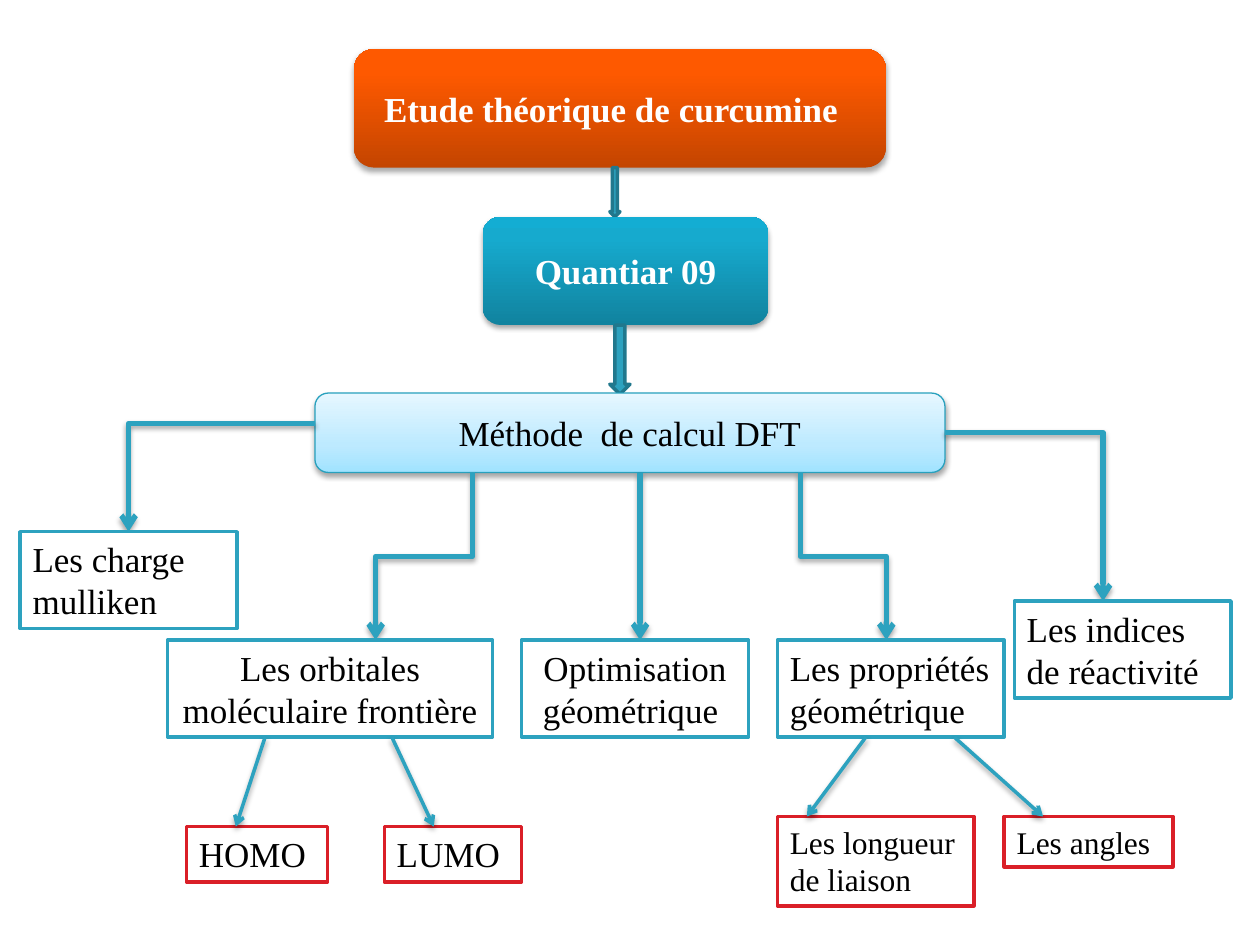
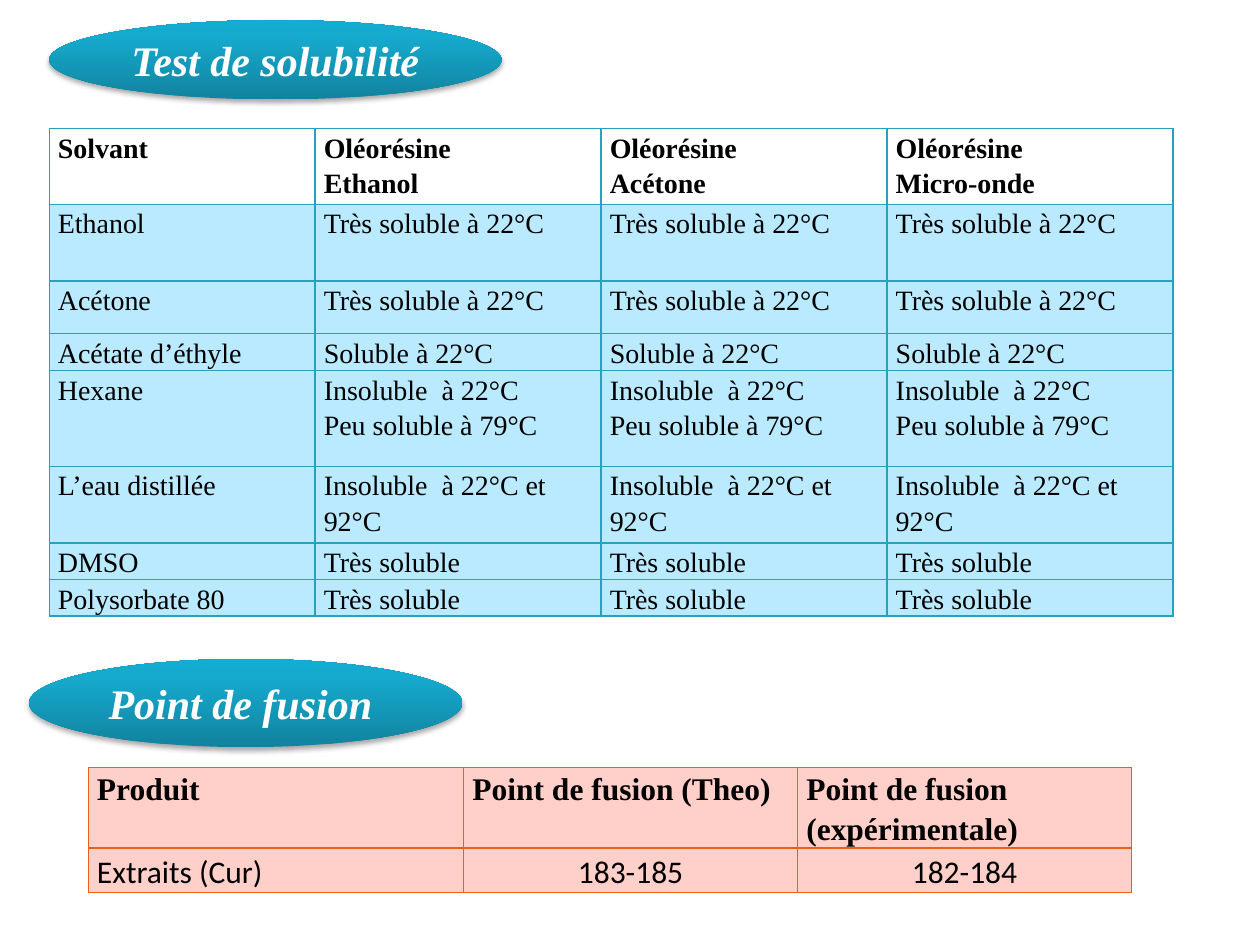
from dataclasses import dataclass

from lxml import etree
from pptx import Presentation
from pptx.dml.color import RGBColor
from pptx.enum.shapes import MSO_CONNECTOR, MSO_SHAPE
from pptx.enum.text import MSO_ANCHOR, MSO_AUTO_SIZE, PP_ALIGN
from pptx.oxml.ns import qn
from pptx.util import Inches, Pt

ROUNDED, OVAL, DOWN_ARROW = MSO_SHAPE.ROUNDED_RECTANGLE, MSO_SHAPE.OVAL, MSO_SHAPE.DOWN_ARROW
STRAIGHT, ELBOW = MSO_CONNECTOR.STRAIGHT, MSO_CONNECTOR.ELBOW
LEFT, CENTER = PP_ALIGN.LEFT, PP_ALIGN.CENTER
MIDDLE = MSO_ANCHOR.MIDDLE
GROW = MSO_AUTO_SIZE.SHAPE_TO_FIT_TEXT


@dataclass(frozen=True)
class Theme:
    """Colours, fonts and type sizes of the slides."""

    serif: str = "Times New Roman"
    sans: str = "Calibri"
    black: str = "000000"
    white: str = "FFFFFF"
    teal: str = "2DA2BF"
    teal_dark: str = "21788D"
    teal_border: str = "28A1BE"
    red: str = "DA1F28"
    orange_border: str = "EB6015"
    pale_blue: str = "BAEAFF"
    pale_pink: str = "FFCFC9"
    orange_gradient: tuple = ((0, "C44500"), (80, "FE5900"), (100, "FF5A00"))
    teal_gradient: tuple = ((0, "11839F"), (80, "16AACE"), (100, "13ADD3"))
    light_gradient: tuple = ((0, "A1E3FF"), (35, "BDEAFF"), (100, "E6F7FF"))
    heading: int = 24
    node: int = 20
    small: int = 18
    cell: int = 16


THEME = Theme()


@dataclass(frozen=True)
class Box:
    """A rectangle in inches."""

    left: float
    top: float
    width: float
    height: float

    @property
    def bottom(self):
        """Return the lower edge."""
        return self.top + self.height

    def across(self, share):
        """Return the horizontal position at a share of the width."""
        return self.left + share * self.width

    def down(self, share):
        """Return the vertical position at a share of the height."""
        return self.top + share * self.height

    def inner(self, left, top, width, height):
        """Return a box placed relative to this one."""
        return Box(self.left + left, self.top + top, width, height)

    def lengths(self):
        """Return the four measures as lengths."""
        return [Inches(value) for value in (self.left, self.top, self.width, self.height)]


def color(value):
    """Turn a hex string into a colour."""
    return RGBColor.from_string(value)


def add_element(parent, tag, **attributes):
    """Append a drawing element with its attributes."""
    return etree.SubElement(parent, qn(tag), {key: str(value) for key, value in attributes.items()})


def add_solid(parent, value):
    """Append a solid fill and return its colour element."""
    return add_element(add_element(parent, "a:solidFill"), "a:srgbClr", val=value)


def add_shadow(effects):
    """Fill an effect list with a soft shadow that falls downwards."""
    shadow = add_element(effects, "a:outerShdw", blurRad=Pt(3.1), dist=Pt(1.8), dir=5400000, rotWithShape=0)
    add_element(add_element(shadow, "a:srgbClr", val=THEME.black), "a:alpha", val=35000)


def fill_gradient(shape, stops):
    """Paint a shape with gradient stops that run from bottom to top."""
    shape.fill.gradient()
    gradient = shape._element.spPr.find(qn("a:gradFill"))
    for child in list(gradient):
        gradient.remove(child)
    stop_list = add_element(gradient, "a:gsLst")
    for position, value in stops:
        stop = add_element(stop_list, "a:gs", pos=position * 1000)
        add_element(stop, "a:srgbClr", val=value)
    add_element(gradient, "a:lin", ang=16200000, scaled=0)


def write_text(text_frame, text, size, value=THEME.black, font=THEME.serif,
               align=LEFT, bold=False, italic=False, spacing=None):
    """Write text and format its paragraphs and runs."""
    text_frame.text = text
    for paragraph in text_frame.paragraphs:
        paragraph.alignment = align
        paragraph.line_spacing = spacing
        for run in paragraph.runs:
            run.font.name, run.font.size = font, Pt(size)
            run.font.bold, run.font.italic = bold, italic
            run.font.color.rgb = color(value)


def add_badge(slide, box, kind, text, stops, border=None, **text_format):
    """Add a gradient shape with a shadow and centred text."""
    shape = slide.shapes.add_shape(kind, *box.lengths())
    fill_gradient(shape, stops)
    if border:
        shape.line.color.rgb = color(border)
        shape.line.width = Pt(0.75)
    else:
        shape.line.fill.background()
    shape.shadow.inherit = False
    add_shadow(shape._element.spPr.find(qn("a:effectLst")))
    shape.text_frame.word_wrap = True
    shape.text_frame.vertical_anchor = MIDDLE
    write_text(shape.text_frame, text, align=CENTER, **text_format)


def add_block_arrow(slide, box):
    """Add a solid arrow that points down."""
    arrow = slide.shapes.add_shape(DOWN_ARROW, *box.lengths())
    arrow.shadow.inherit = False
    arrow.fill.solid()
    arrow.fill.fore_color.rgb = color(THEME.teal)
    arrow.line.color.rgb = color(THEME.teal_dark)
    arrow.line.width = Pt(2)


def add_framed_text(slide, box, text, border, size=THEME.node, align=LEFT):
    """Add a white text box with a coloured outline."""
    frame = slide.shapes.add_textbox(*box.lengths())
    frame.fill.solid()
    frame.fill.fore_color.rgb = color(THEME.white)
    frame.line.color.rgb = color(border)
    frame.line.width = Pt(2)
    frame.text_frame.word_wrap = True
    frame.text_frame.auto_size = GROW
    write_text(frame.text_frame, text, size, align=align)


def add_arrow(slide, start, end, kind=STRAIGHT, weight=3):
    """Add an arrow between two points and return it."""
    points = [Inches(value) for value in (*start, *end)]
    connector = slide.shapes.add_connector(kind, *points)
    connector.line.color.rgb = color(THEME.teal)
    connector.line.width = Pt(weight)
    properties = connector._element.spPr
    add_element(properties.find(qn("a:ln")), "a:tailEnd", type="arrow")
    add_shadow(add_element(properties, "a:effectLst"))
    return connector


def turn_connector(connector, preset, degrees, flip=None):
    """Set the bend, rotation and mirroring of an elbow arrow."""
    properties = connector._element.spPr
    properties.find(qn("a:prstGeom")).set("prst", preset)
    transform = properties.find(qn("a:xfrm"))
    transform.set("rot", str(degrees * 60000))
    if flip:
        transform.set(flip, "1")


def add_drop_arrow(slide, start, end):
    """Add an arrow that goes down, sideways and down again."""
    to_right = end[0] > start[0]
    middle_x, middle_y = (start[0] + end[0]) / 2, (start[1] + end[1]) / 2
    half_length, half_shift = (end[1] - start[1]) / 2, abs(end[0] - start[0]) / 2
    connector = add_arrow(slide, (middle_x - half_length, middle_y - half_shift),
                          (middle_x + half_length, middle_y + half_shift), ELBOW)
    turn_connector(connector, "bentConnector3", 270 if to_right else 90, "flipH" if to_right else None)


def add_side_arrow(slide, start, end):
    """Add an arrow that goes sideways and then down."""
    left, right = sorted((start[0], end[0]))
    connector = add_arrow(slide, (left, start[1]), (right, end[1]), ELBOW)
    to_right = end[0] > start[0]
    turn_connector(connector, "bentConnector2", 0 if to_right else 180, None if to_right else "flipV")


def draw_trunk(slide, box):
    """Draw the study, the program and the method, and return the method box."""
    method = box.inner(0, 2.73, 5, 0.63)
    white_bold = {"size": THEME.node, "value": THEME.white, "bold": True}
    add_badge(slide, box.inner(0.31, 0, 4.22, 0.94), ROUNDED, "Etude théorique de curcumine  ",
              THEME.orange_gradient, **white_bold)
    add_block_arrow(slide, box.inner(2.34, 0.94, 0.08, 0.39))
    add_badge(slide, box.inner(1.33, 1.33, 2.27, 0.86), ROUNDED, "Quantiar 09",
              THEME.teal_gradient, **white_bold)
    add_block_arrow(slide, box.inner(2.34, 2.19, 0.16, 0.55))
    add_badge(slide, method, ROUNDED, "Méthode  de calcul DFT", THEME.light_gradient,
              THEME.teal_border, size=THEME.node)
    return method


def draw_branches(slide, method, box):
    """Draw the five results of the method and return the two that split further."""
    orbitals = box.inner(1.17, 0.86, 2.58, 0.77)
    optimisation = box.inner(3.98, 0.86, 1.8, 0.77)
    geometry = box.inner(6.01, 0.86, 1.8, 0.77)
    indices = box.inner(7.89, 0.55, 1.72, 0.77)
    charges = box.inner(0, 0, 1.72, 0.77)
    add_drop_arrow(slide, (method.across(0.77), method.bottom), (geometry.across(0.48), geometry.top))
    add_drop_arrow(slide, (method.across(0.25), method.bottom), (orbitals.across(0.64), orbitals.top))
    center = method.across(0.516)
    add_arrow(slide, (center, method.bottom), (center, optimisation.top))
    add_side_arrow(slide, (method.across(1), method.down(0.5)), (indices.across(0.41), indices.top))
    add_side_arrow(slide, (method.left, method.down(0.38)), (charges.across(0.5), charges.top))
    for node, text, align in (
        (optimisation, "Optimisation géométrique ", CENTER),
        (geometry, "Les propriétés géométrique", LEFT),
        (orbitals, "Les orbitales moléculaire frontière ", CENTER),
        (indices, "Les indices de réactivité", LEFT),
        (charges, "Les charge mulliken", LEFT),
    ):
        add_framed_text(slide, node, text, THEME.teal, align=align)
    return orbitals, geometry


def draw_leaves(slide, parent, leaves, size):
    """Draw the outcomes below a parent, each with its arrow."""
    for text, box, parent_share, leaf_share in leaves:
        leaf = parent.inner(*box)
        add_framed_text(slide, leaf, text, THEME.red, size)
        add_arrow(slide, (parent.across(parent_share), parent.bottom),
                  (leaf.across(leaf_share), leaf.top), weight=2)


def add_cell_borders(cell, value):
    """Outline a table cell."""
    properties = cell._tc.get_or_add_tcPr()
    for index, side in enumerate(("a:lnL", "a:lnR", "a:lnT", "a:lnB")):
        line = add_element(properties, side, w=Pt(0.75))
        add_solid(line, value)
        properties.insert(index, line)


def draw_table(slide, box, columns, heights, rows, border, fills, size, body_font, value_align):
    """Draw a table with a bold header row."""
    table = slide.shapes.add_table(len(rows), len(columns), *box.lengths()).table
    for column, width in zip(table.columns, columns):
        column.width = Inches(width)
    for row_index, (row, height, texts) in enumerate(zip(table.rows, heights, rows)):
        row.height = Inches(height)
        header = row_index == 0
        for column_index, (cell, text) in enumerate(zip(row.cells, texts)):
            cell.margin_left = cell.margin_right = Inches(0.07)
            cell.margin_top = cell.margin_bottom = 0
            cell.fill.solid()
            cell.fill.fore_color.rgb = color(fills[0 if header else 1])
            add_cell_borders(cell, border)
            write_text(cell.text_frame, text, size, font=THEME.serif if header else body_font,
                       align=LEFT if header or column_index == 0 else value_align,
                       bold=header, spacing=1.15)


def draw_heading(slide, box, text):
    """Draw an oval section heading."""
    add_badge(slide, box, OVAL, text, THEME.teal_gradient, size=THEME.heading,
              value=THEME.white, bold=True, italic=True)


def draw_solubility(slide, box):
    """Draw the solubility section."""
    very_soluble = "Très soluble à 22°C"
    results = (
        ("Ethanol", very_soluble),
        ("Acétone", very_soluble),
        ("Acétate d’éthyle", "Soluble à 22°C"),
        ("Hexane", "Insoluble  à 22°C\nPeu soluble à 79°C"),
        ("L’eau distillée", "Insoluble  à 22°C et 92°C"),
        ("DMSO", "Très soluble"),
        ("Polysorbate 80", "Très soluble"),
    )
    extracts = [f"Oléorésine\n{name}" for name in ("Ethanol", "Acétone", "Micro-onde")]
    rows = [["Solvant", *extracts]]
    rows += [[solvent] + [result] * len(extracts) for solvent, result in results]
    draw_heading(slide, box.inner(0, 0, 3.59, 0.63), "Test de solubilité ")
    draw_table(slide, box.inner(0, 0.86, 8.91, 3.87), [2.11] + [2.27] * 3,
               (0.6, 0.61, 0.42, 0.29, 0.76, 0.61, 0.29, 0.29), rows, THEME.teal_border,
               (THEME.white, THEME.pale_blue), THEME.cell, THEME.serif, LEFT)


def draw_melting_point(slide, box):
    """Draw the melting point section."""
    rows = (
        ("Produit", "Point de fusion (Theo)", "Point de fusion  (expérimentale)"),
        ("Extraits (Cur)", "183-185", "182-184"),
    )
    draw_heading(slide, box.inner(0, 0, 3.44, 0.7), "Point de fusion ")
    draw_table(slide, box.inner(0.47, 0.86, 8.28, 0.99), (2.98, 2.65, 2.65), (0.64, 0.35), rows,
               THEME.orange_border, (THEME.pale_pink, THEME.pale_pink), THEME.small, THEME.sans, CENTER)


def build_study_slide(slide):
    """Build the diagram of the theoretical study."""
    method = draw_trunk(slide, Box(2.5, 0.39, 5, 3.36))
    orbitals, geometry = draw_branches(slide, method, Box(0.16, 4.22, 9.61, 1.63))
    draw_leaves(slide, orbitals, (("HOMO ", (0.15, 1.48, 1.12, 0.44), 0.3, 0.35),
                                  ("LUMO", (1.72, 1.48, 1.09, 0.44), 0.69, 0.36)), THEME.node)
    draw_leaves(slide, geometry, (("Les longueur\nde liaison", (0, 1.4, 1.56, 0.71), 0.39, 0.15),
                                  ("Les angles", (1.8, 1.4, 1.34, 0.4), 0.78, 0.23)), THEME.small)


def build_results_slide(slide):
    """Build the slide with the two result tables."""
    draw_solubility(slide, Box(0.39, 0.16, 8.91, 4.73))
    draw_melting_point(slide, Box(0.23, 5.23, 8.75, 1.85))


def main():
    """Build and save the presentation."""
    presentation = Presentation()
    presentation.slide_width, presentation.slide_height = Inches(10), Inches(7.5)
    for build in (build_study_slide, build_results_slide):
        build(presentation.slides.add_slide(presentation.slide_layouts[6]))
    presentation.save("out.pptx")


if __name__ == "__main__":
    main()
